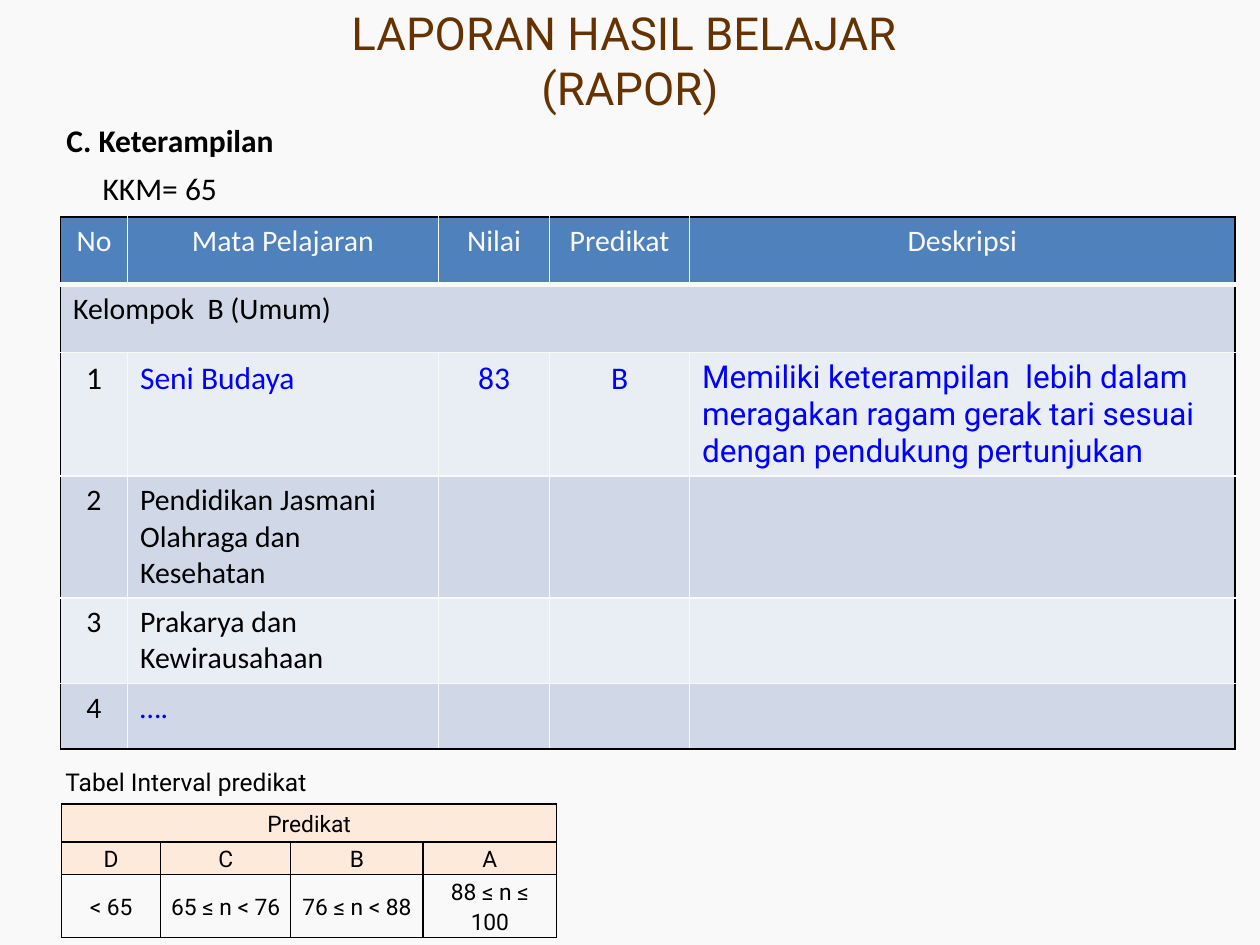
from lxml.etree import SubElement
from pptx import Presentation
from pptx.dml.color import RGBColor
from pptx.enum.text import MSO_ANCHOR, PP_ALIGN
from pptx.oxml.ns import qn
from pptx.util import Cm, Pt

COLORS = {
    "paper": "F9F9F9",
    "title": "663300",
    "ink": "000000",
    "entry": "0000FF",
    "header": "4F81BD",
    "band_dark": "D0D8E8",
    "band_light": "E9EDF4",
    "peach": "FDEADA",
}
SUBJECT_HEADERS = ["No", "Mata Pelajaran", "Nilai", "Predikat", "Deskripsi"]
SUBJECT_ROWS = [
    ["Kelompok  B (Umum)", "", "", "", ""],
    ["1", "Seni Budaya", "83", "B",
     "Memiliki keterampilan  lebih dalam meragakan ragam gerak tari sesuai "
     "dengan pendukung pertunjukan"],
    ["2", "Pendidikan Jasmani Olahraga dan Kesehatan", "", "", ""],
    ["3", "Prakarya dan Kewirausahaan", "", "", ""],
    ["4", "….", "", "", ""],
]
INTERVAL_ROWS = [
    ["Predikat", "", "", ""],
    ["D", "C", "B", "A"],
    ["< 65", "65 ≤ n < 76", "76 ≤ n < 88", "88 ≤ n ≤ 100"],
]


def color(name):
    return RGBColor.from_string(COLORS[name])


def add_span(para, text, size, font="Calibri", ink="ink", bold=False):
    span = para.add_run()
    span.text = text
    span.font.size = Pt(size)
    span.font.name = font
    span.font.bold = bold
    span.font.color.rgb = color(ink)


def set_borders(cell, borders):
    """Draw the cell's sides; borders maps L, R, T, B to (colour name, points)."""
    properties = cell._tc.get_or_add_tcPr()
    for position, side in enumerate("LRTB"):
        ink, width = borders[side]
        line = SubElement(properties, qn(f"a:ln{side}"), w=str(Pt(width)))
        fill = SubElement(line, qn("a:solidFill"))
        SubElement(fill, qn("a:srgbClr"), val=COLORS[ink])
        properties.insert(position, line)


def add_grid(page, left, top, widths, heights):
    """Add an unbanded table with the given column widths and row heights in cm."""
    frame = page.shapes.add_table(
        len(heights), len(widths), Cm(left), Cm(top), Cm(sum(widths)), Cm(sum(heights)))
    table = frame.table
    table.first_row = table.horz_banding = False
    for column, width in zip(table.columns, widths):
        column.width = Cm(width)
    for row, height in zip(table.rows, heights):
        row.height = Cm(height)
    return table


def add_text_box(page, left, top, width, height):
    box = page.shapes.add_textbox(Cm(left), Cm(top), Cm(width), Cm(height))
    box.text_frame.word_wrap = True
    return box.text_frame


def fill_title(page, left, top, width, height):
    box = page.shapes.title
    box.left, box.top, box.width, box.height = Cm(left), Cm(top), Cm(width), Cm(height)
    box.text_frame.vertical_anchor = MSO_ANCHOR.MIDDLE
    para = box.text_frame.paragraphs[0]
    para.alignment = PP_ALIGN.CENTER
    add_span(para, "LAPORAN HASIL BELAJAR ", 26, "Roboto", "title")
    para.add_line_break()
    add_span(para, "(RAPOR)", 26, "Roboto", "title")


def add_section_heading(page, left, top, width, height):
    frame = add_text_box(page, left, top, width, height)
    add_span(frame.paragraphs[0], "C. Keterampilan", 18, bold=True)
    para = frame.add_paragraph()
    para.space_before = Pt(6)
    para._p.get_or_add_pPr().set("marL", str(Cm(0.73)))
    add_span(para, "KKM= 65", 18)


def add_subject_table(page, left, top):
    rows = [SUBJECT_HEADERS] + SUBJECT_ROWS
    table = add_grid(page, left, top, [1.35, 6.27, 2.24, 2.82, 11],
                     [1.37] * 5 + [1.32])
    last_row, last_column = len(rows) - 1, len(SUBJECT_HEADERS) - 1
    table.cell(1, 0).merge(table.cell(1, last_column))
    for r, texts in enumerate(rows):
        for c, text in enumerate(texts):
            cell = table.cell(r, c)
            cell.fill.solid()
            band = "band_dark" if r % 2 else "band_light"
            cell.fill.fore_color.rgb = color("header" if r == 0 else band)
            set_borders(cell, {
                "L": ("ink" if c == 0 else "paper", 1),
                "R": ("ink" if c == last_column or r == 1 else "paper", 1),
                "T": ("ink" if r == 0 else "paper", 3 if r == 1 else 1),
                "B": ("ink" if r == last_row else "paper", 3 if r == 0 else 1),
            })
            if not text:
                continue
            para = cell.text_frame.paragraphs[0]
            if r == 0 or (r > 1 and c in (0, 2, 3)):
                para.alignment = PP_ALIGN.CENTER
            is_entry = c > 0 and r in (2, last_row)
            ink = "paper" if r == 0 else "entry" if is_entry else "ink"
            font = "Roboto" if r == 2 and c == last_column else "Calibri"
            add_span(para, text, 18 if r == 2 else 17, font, ink)


def add_interval_table(page, left, top):
    table = add_grid(page, left, top, [2, 2.62, 2.67, 2.69], [0.76, 0.66, 0.81])
    table.cell(0, 0).merge(table.cell(0, 3))
    for r, texts in enumerate(INTERVAL_ROWS):
        for c, text in enumerate(texts):
            cell = table.cell(r, c)
            if r < 2:
                cell.fill.solid()
                cell.fill.fore_color.rgb = color("peach")
            else:
                cell.fill.background()
            set_borders(cell, dict.fromkeys("LRTB", ("ink", 1)))
            cell.margin_left = cell.margin_right = Cm(0.18)
            cell.margin_top = cell.margin_bottom = 0
            cell.vertical_anchor = MSO_ANCHOR.MIDDLE
            para = cell.text_frame.paragraphs[0]
            para.alignment = PP_ALIGN.CENTER
            para.line_spacing = 1.15
            properties = para._p.get_or_add_pPr()
            properties.set("marL", "0")
            properties.set("indent", str(-Cm(0.64)))
            if text:
                add_span(para, text, 13, "Roboto")


def add_interval_caption(page, left, top, width, height):
    frame = add_text_box(page, left, top, width, height)
    add_span(frame.paragraphs[0], "Tabel Interval predikat", 14, "Roboto")


def main():
    deck = Presentation()
    deck.slide_width, deck.slide_height = Cm(25.4), Cm(19.05)
    page = deck.slides.add_slide(deck.slide_layouts[5])
    page.background.fill.solid()
    page.background.fill.fore_color.rgb = color("paper")
    fill_title(page, 1.27, -0.38, 22.86, 3.18)
    add_subject_table(page, 1.22, 4.37)
    add_section_heading(page, 1.09, 2.31, 11.48, 2.01)
    add_interval_table(page, 1.24, 16.21)
    add_interval_caption(page, 1.07, 15.34, 7.04, 0.86)
    deck.save("out.pptx")


if __name__ == "__main__":
    main()
